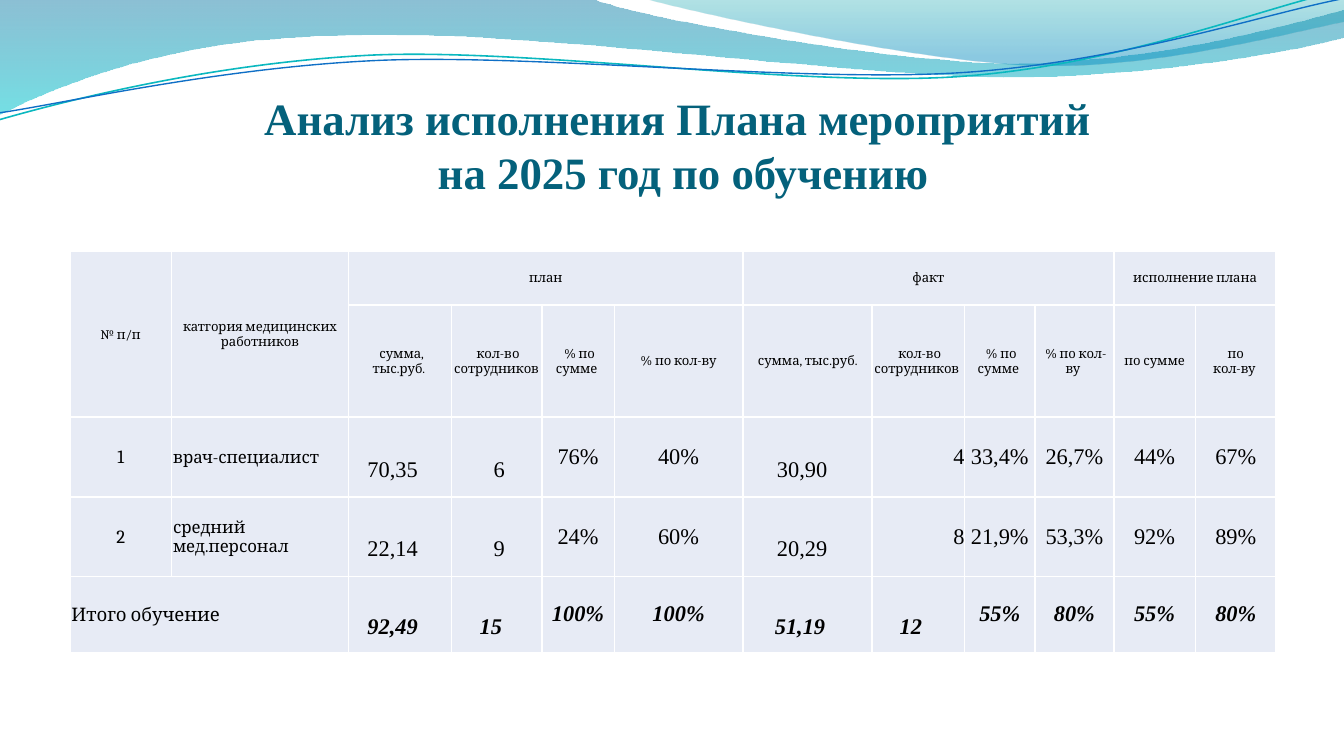
import math
from dataclasses import dataclass, replace
from typing import Optional

from lxml import etree
from pptx import Presentation
from pptx import util as u
from pptx.dml import color
from pptx.enum import text
from pptx.oxml import ns

Cm = u.Cm
SERIF, CAMBRIA = "Times New Roman", "Cambria"
LEFT, CENTER, RIGHT = text.PP_ALIGN.LEFT, text.PP_ALIGN.CENTER, text.PP_ALIGN.RIGHT
WHITE, BLACK, CELL_FILL, TITLE_COLOR = "FFFFFF", "000000", "E7EBF5", "04617B"


@dataclass(frozen=True)
class Stop:
    position: float
    color: str
    opacity: int


@dataclass(frozen=True)
class Wave:
    """Outline in cm as it shows; a segment has one point (line) or three (Bezier curve)."""
    start: tuple
    segments: list
    gradient: tuple = ()
    line: Optional[str] = None
    width: float = 0
    rotation: float = 0
    center: tuple = (0, 0)


@dataclass(frozen=True)
class CellStyle:
    font: str = CAMBRIA
    size: float = 7
    align: int = CENTER
    bold: bool = False
    top: float = 0.03
    right: float = 0.03
    left: float = 0.03


WAVES = [
    Wave((0, 0), [[(11.18, -0.03)],
                  [(12.09, 0.33), (16.87, 1.19), (19.25, 1.19)],
                  [(21.67, 1.19), (24.33, 0.48), (25.4, 0.18)],
                  [(25.43, 0.69)],
                  [(24.97, 0.84), (22.1, 1.45), (18.95, 1.45)],
                  [(15.8, 1.42), (9.7, 0.53), (6.53, 0.66)],
                  [(3.28, 0.69), (1.17, 1.57), (-0.03, 2.16)],
                  [(0, 0)]],
         gradient=(Stop(0, "0074A1", 45), Stop(1, "00C6CF", 55))),
    Wave((12.17, -0.03), [[(12.93, 0.2), (17.32, 1.17), (19.53, 1.24)],
                          [(21.74, 1.32), (24.41, 0.61), (25.4, 0.41)],
                          [(25.4, 0)],
                          [(12.17, -0.03)]],
         gradient=(Stop(0, "00A1A9", 30), Stop(0.8, "008BBF", 45))),
    Wave((0, 2.26), [[(1.22, 1.91), (4.01, 1.19), (7.04, 1.04)],
                     [(10.06, 0.91), (15.04, 1.65), (18.08, 1.45)],
                     [(21.16, 1.24), (23.85, 0.15), (25.35, -0.18)]],
         line="0AB8BF", width=0.85, rotation=-2.7, center=(12.67, 1.1)),
    Wave((0, 2.13), [[(1.19, 1.96), (4.17, 1.27), (7.19, 1.14)],
                     [(10.24, 1.02), (15.16, 1.57), (18.21, 1.37)],
                     [(21.23, 1.17), (23.93, 0.25), (25.4, -0.03)]],
         line="0F6FC6", width=0.75, rotation=-2.7, center=(12.69, 1.13)),
]

COLUMNS = [1.92, 3.35, 1.94, 1.71, 1.37, 2.43, 2.44, 1.75, 1.33, 1.49, 1.54, 1.53]
ROWS = [1.01, 2.12, 1.51, 1.51, 1.43]
MEASURES = [" сумма, тыс.руб. ", " кол-во сотрудников ", " % по сумме ", " % по кол-ву "]
CELLS = [
    ["№ п/п", "катгория медицинских работников", " план ", "", "", "",
     "факт", "", "", "", "исполнение плана", ""],
    ["", "", *MEASURES, *MEASURES, " по сумме ", " по \vкол-ву "],
    ["1", "врач-специалист", "70,35", "6", "76%", "40%",
     "30,90", "4", "33,4%", "26,7%", "44%", "67%"],
    ["2", "средний мед.персонал", "22,14", "9", "24%", "60%",
     "20,29", "8", "21,9%", "53,3%", "92%", "89%"],
    ["Итого обучение", "", "92,49", "15", "100%", "100%",
     "51,19", "12", "55%", "80%", "55%", "80%"],
]
MERGES = [((0, 0), (1, 0)), ((0, 1), (1, 1)), ((0, 2), (0, 5)),
          ((0, 6), (0, 9)), ((0, 10), (0, 11)), ((4, 0), (4, 1))]

HEADER = CellStyle()
NUMBER = CellStyle(font=SERIF, size=12, top=0, right=0, left=0)
LOWERED = replace(NUMBER, top=0.48, right=0.28)
TOTAL_ROW = 4


def rgb(value: str) -> color.RGBColor:
    return color.RGBColor.from_string(value)


def format_text(tf, font: str, size: float, hex_color: str, align, bold=False, italic=False) -> None:
    for p in tf.paragraphs:
        p.alignment = align
        for r in p.runs:
            r.font.name, r.font.size = font, u.Pt(size)
            r.font.bold, r.font.italic = bold, italic
            r.font.color.rgb = rgb(hex_color)


def unrotated(wave: Wave, point: tuple) -> tuple:
    """Place a point, in EMU, as it lies before the shape's own rotation."""
    angle = math.radians(-wave.rotation)
    cx, cy = wave.center
    dx, dy = point[0] - cx, point[1] - cy
    return (Cm(cx + dx * math.cos(angle) - dy * math.sin(angle)),
            Cm(cy + dx * math.sin(angle) + dy * math.cos(angle)))


def curve_segments(sp, wave: Wave) -> None:
    """Join the three straight steps of each curved segment into one Bezier curve."""
    steps = iter(list(sp.element.iter(ns.qn("a:lnTo"))))
    for segment in wave.segments:
        first, *others = [next(steps) for _ in segment]
        if others:
            first.tag = ns.qn("a:cubicBezTo")
            for step in others:
                first.append(step[0])
                step.getparent().remove(step)


def draw_wave(s, wave: Wave) -> None:
    builder = s.shapes.build_freeform(*unrotated(wave, wave.start))
    points = [unrotated(wave, point) for segment in wave.segments for point in segment]
    builder.add_line_segments(points, close=bool(wave.gradient))
    sp = builder.convert_to_shape()
    curve_segments(sp, wave)
    sp.rotation = wave.rotation
    sp.shadow.inherit = False
    if wave.line:
        sp.fill.background()
        sp.line.color.rgb = rgb(wave.line)
        sp.line.width = u.Pt(wave.width)
        return
    sp.line.fill.background()
    sp.fill.gradient()
    sp.fill.gradient_angle = 270
    for target, stop in zip(sp.fill.gradient_stops, wave.gradient):
        target.position = stop.position
        target.color.rgb = rgb(stop.color)
    for clr, stop in zip(sp.element.spPr.iter(ns.qn("a:srgbClr")), wave.gradient):
        etree.SubElement(clr, ns.qn("a:alpha"), val=str(stop.opacity * 1000))


def cell_style(row: int, col: int) -> CellStyle:
    if row < 2:
        return HEADER
    total = row == TOTAL_ROW
    if col == 0:
        return replace(HEADER, size=10, align=LEFT if total else CENTER)
    if col == 1:
        return replace(HEADER, size=9, align=LEFT)
    if col == 7 and not total:
        return replace(NUMBER, align=RIGHT)
    style = LOWERED if col in (2, 3, 6, 7) else NUMBER
    if col == 3:
        style = replace(style, right=0.22) if total else replace(style, right=0, left=0.1)
    if col == 6 and not total:
        style = replace(style, right=0.2)
    return replace(style, bold=total)


def add_borders(cell) -> None:
    tc_pr = cell._tc.get_or_add_tcPr()
    for i, side in enumerate(("lnL", "lnR", "lnT", "lnB")):
        ln = etree.Element(ns.qn("a:" + side), w=str(u.Pt(1)))
        fill = etree.SubElement(ln, ns.qn("a:solidFill"))
        etree.SubElement(fill, ns.qn("a:srgbClr"), val=WHITE)
        tc_pr.insert(i, ln)


def draw_table(s) -> None:
    frame = s.shapes.add_table(len(ROWS), len(COLUMNS), Cm(1.32), Cm(4.75),
                               Cm(sum(COLUMNS)), Cm(sum(ROWS)))
    table = frame.table
    table.first_row = table.horz_banding = False
    for column, width in zip(table.columns, COLUMNS):
        column.width = Cm(width)
    for row, height in zip(table.rows, ROWS):
        row.height = Cm(height)
    for i, values in enumerate(CELLS):
        for j, value in enumerate(values):
            cell, style = table.cell(i, j), cell_style(i, j)
            cell.text_frame.text = value
            format_text(cell.text_frame, style.font, style.size, BLACK,
                        style.align, style.bold, style.bold)
            cell.vertical_anchor = text.MSO_ANCHOR.MIDDLE
            cell.margin_left, cell.margin_right = Cm(style.left), Cm(style.right)
            cell.margin_top, cell.margin_bottom = Cm(style.top), 0
            cell.fill.solid()
            cell.fill.fore_color.rgb = rgb(CELL_FILL)
            add_borders(cell)
    for first, last in MERGES:
        table.cell(*first).merge(table.cell(*last))


def draw_title(s) -> None:
    title = s.shapes.title
    title.left, title.top, title.width, title.height = Cm(0.7), Cm(2.35), Cm(24.2), Cm(1.4)
    tf = title.text_frame
    tf.text = "Анализ исполнения Плана мероприятий\v на 2025 год по обучению"
    tf.auto_size = text.MSO_AUTO_SIZE.NONE
    tf.word_wrap = True
    tf.vertical_anchor = text.MSO_ANCHOR.BOTTOM
    tf.margin_left = tf.margin_right = tf.margin_bottom = 0
    tf.margin_top = Cm(0.13)
    format_text(tf, SERIF, 24, TITLE_COLOR, CENTER, bold=True)


prs = Presentation()
prs.slide_width, prs.slide_height = Cm(25.4), Cm(14.29)
s = prs.slides.add_slide(prs.slide_layouts[5])
for wave in WAVES:
    draw_wave(s, wave)
draw_title(s)
draw_table(s)
prs.save("out.pptx")
